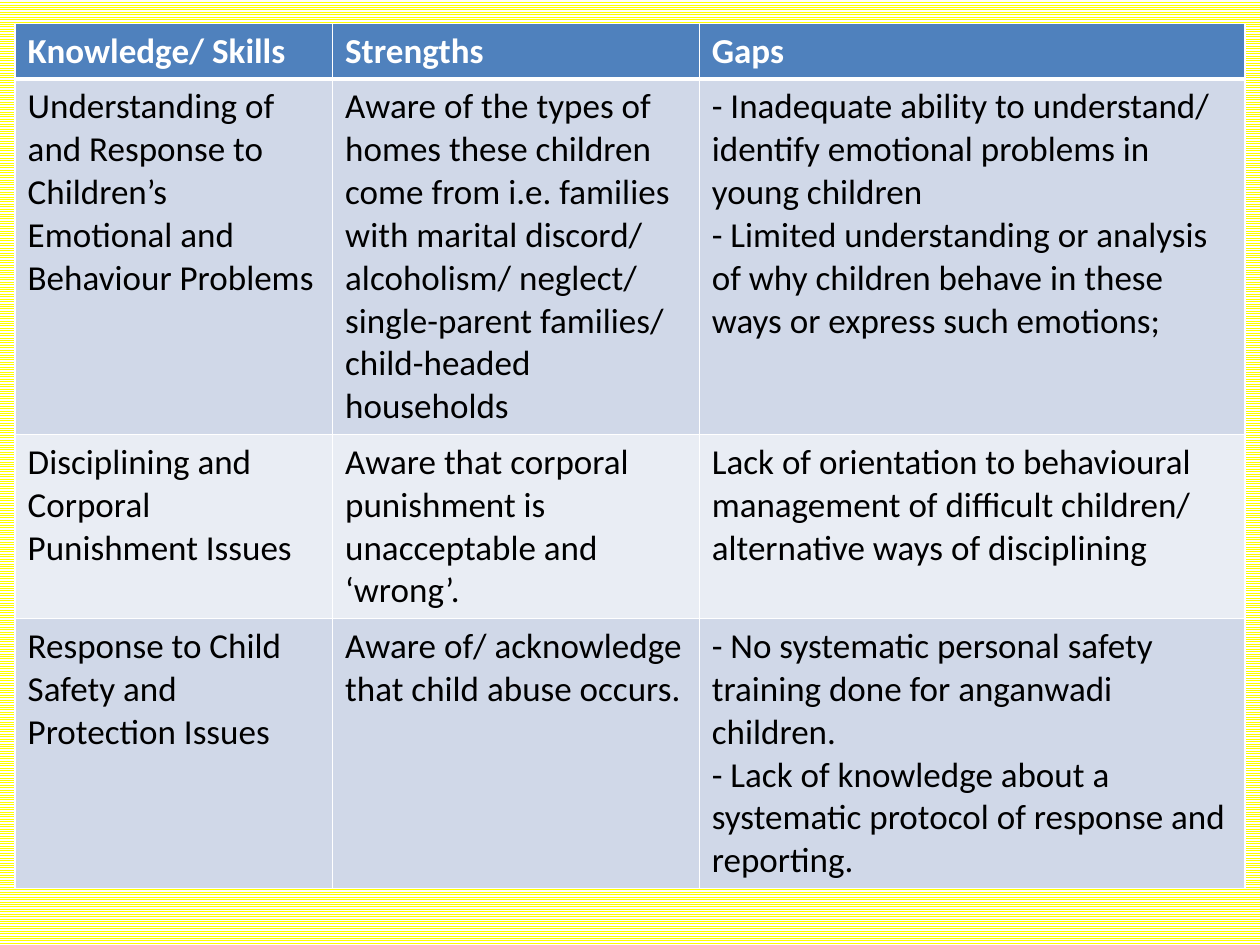
"""Build a slide with a table of knowledge and skills, strengths and gaps."""
from dataclasses import dataclass

from lxml.etree import SubElement
from pptx import Presentation
from pptx.dml.color import RGBColor as RGB
from pptx.enum.dml import MSO_PATTERN
from pptx.oxml.ns import qn
from pptx.table import _Cell as Cell
from pptx.util import Inches, Pt

COLORS = {
    "stripe": "FFFF00",
    "white": "FFFFFF",
    "black": "000000",
    "header": "4F81BD",
    "odd": "D0D8E8",
    "even": "E9EDF4",
}
WIDTH, HEIGHT = 10, 7.5
LEFT, TOP = 0.012, 0.025
COLUMNS = (0.252, 0.291, 0.433)
LINE, MARGINS = 0.34, 0.1
FONT, SIZE = "Calibri", 20
THIN, THICK = 1, 3


@dataclass(frozen=True)
class Row:
    lines: int
    skill: str
    strength: str
    gaps: tuple[str, ...]

    @property
    def height(self) -> float:
        return self.lines * LINE + MARGINS

    @property
    def cells(self) -> tuple[tuple[str, ...], ...]:
        return (self.skill,), (self.strength,), self.gaps


ROWS = (
    Row(1, "Knowledge/ Skills", "Strengths", ("Gaps",)),
    Row(
        8,
        "Understanding of and Response to Children’s Emotional and Behaviour Problems",
        "Aware of the types of homes these children come from i.e. families with "
        "marital discord/ alcoholism/ neglect/ single-parent families/ "
        "child-headed households",
        (
            "- Inadequate ability to understand/ identify emotional problems in "
            "young children",
            "- Limited understanding or analysis of why children behave in these "
            "ways or express such emotions;",
        ),
    ),
    Row(
        4,
        "Disciplining and Corporal Punishment Issues",
        "Aware that corporal punishment is unacceptable and ‘wrong’.",
        (
            "Lack of orientation to behavioural management of difficult children/ "
            "alternative ways of disciplining",
        ),
    ),
    Row(
        6,
        "Response to Child Safety and Protection Issues",
        "Aware of/ acknowledge that child abuse occurs.",
        (
            "- No systematic personal safety training done for anganwadi children.",
            "- Lack of knowledge about a systematic protocol of response and reporting.",
        ),
    ),
)


def color(name: str) -> RGB:
    return RGB.from_string(COLORS[name])


def add_borders(cell: Cell, top: int, bottom: int) -> None:
    tc_pr = cell._tc.get_or_add_tcPr()
    for side, width in (("L", THIN), ("R", THIN), ("T", top), ("B", bottom)):
        ln = SubElement(tc_pr, qn(f"a:ln{side}"), w=str(Pt(width)))
        fill = SubElement(ln, qn("a:solidFill"))
        SubElement(fill, qn("a:srgbClr"), val=COLORS["white"])


def fill_cell(cell: Cell, paragraphs: tuple[str, ...], row: int) -> None:
    header = row == 0
    add_borders(cell, THICK if row == 1 else THIN, THICK if header else THIN)
    cell.fill.solid()
    cell.fill.fore_color.rgb = color("header" if header else "odd" if row % 2 else "even")
    tf = cell.text_frame
    for i, text in enumerate(paragraphs):
        p = tf.add_paragraph() if i else tf.paragraphs[0]
        r = p.add_run()
        r.text = text
        r.font.name, r.font.size, r.font.bold = FONT, Pt(SIZE), header
        r.font.color.rgb = color("white" if header else "black")


def main() -> None:
    prs = Presentation()
    prs.slide_width, prs.slide_height = Inches(WIDTH), Inches(HEIGHT)
    s = prs.slides.add_slide(prs.slide_layouts[6])

    bg = s.background.fill
    bg.patterned()
    bg.pattern = MSO_PATTERN.NARROW_HORIZONTAL
    bg.fore_color.rgb, bg.back_color.rgb = color("stripe"), color("white")

    table = s.shapes.add_table(
        len(ROWS), len(COLUMNS),
        Inches(LEFT * WIDTH), Inches(TOP * HEIGHT),
        Inches(sum(COLUMNS) * WIDTH), Inches(sum(row.height for row in ROWS)),
    ).table
    for column, share in zip(table.columns, COLUMNS):
        column.width = Inches(share * WIDTH)
    for i, row in enumerate(ROWS):
        table.rows[i].height = Inches(row.height)
        for j, paragraphs in enumerate(row.cells):
            fill_cell(table.cell(i, j), paragraphs, i)

    prs.save("out.pptx")


if __name__ == "__main__":
    main()
